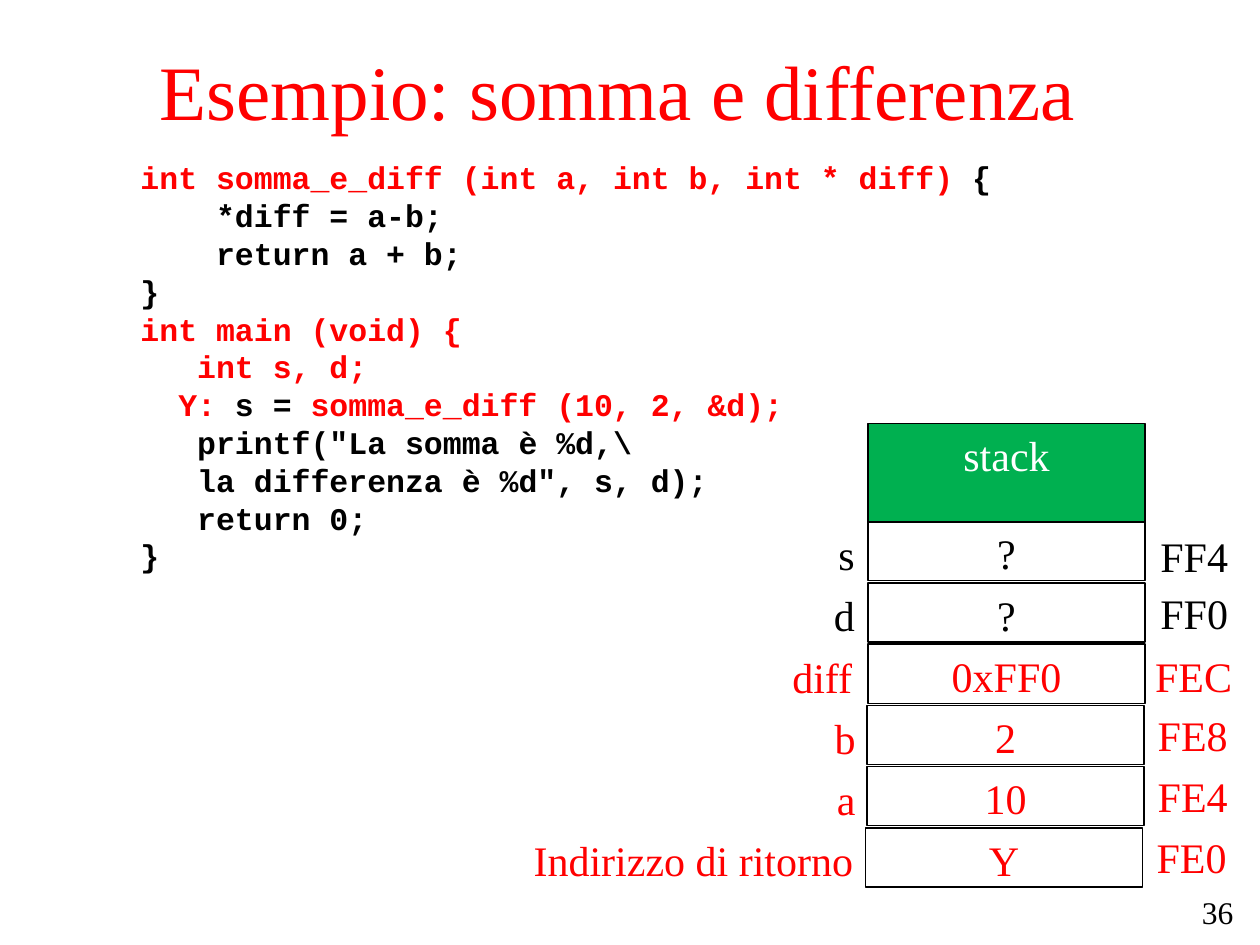
import pptx
import pptx.util
import pptx.dml.color
import pptx.enum.shapes
import pptx.enum.text

Pt = pptx.util.Pt
ALIGN = pptx.enum.text.PP_ALIGN
TOP = pptx.enum.text.MSO_ANCHOR.TOP
MID = pptx.enum.text.MSO_ANCHOR.MIDDLE
RECT = pptx.enum.shapes.MSO_SHAPE.RECTANGLE

HUES = {"red": "FF0000", "black": "000000", "green": "00B050", "white": "FFFFFF"}
SERIF, MONO = "Times New Roman", "Courier New"

TITLE = "Esempio: somma e differenza"

# Code lines: indent in characters, then (text, colour) runs
CODE = [
    (0, [("int somma_e_diff (int a, int b, int * diff)", "red"), (" {", "black")]),
    (4, [("*diff = a-b;", "black")]),
    (4, [("return a + b;", "black")]),
    (0, [("}", "black")]),
    (0, [("int main (void) {", "red")]),
    (3, [("int s, d;", "red")]),
    (2, [("Y: ", "red"), ("s = ", "black"), ("somma_e_diff (10, 2, &d);", "red")]),
    (3, [('printf("La somma è %d,\\', "black")]),
    (3, [('la differenza è %d", s, d);', "black")]),
    (3, [("return 0;", "black")]),
    (0, [("}", "black")]),
]

# Stack rows: name, value, address, colour, cell left,
# name right, name width, address left, address top shift
ROWS = [
    ("s", "?", "FF4", "black", 496, 495.4, 27.4, 656, 1.4),
    ("d", "?", "FF0", "black", 496, 495.4, 25.9, 656, -1.2),
    ("diff", "0xFF0", "FEC", "red", 496, 494, 61.2, 653, 0),
    ("b", "2", "FE8", "red", 495.4, 496, 47.5, 654.5, -1.4),
    ("a", "10", "FE4", "red", 495.4, 496, 47.5, 654.5, -1.4),
    ("Indirizzo di ritorno", "Y", "FE0", "red", 494.6, 494.6, 205.2, 653.8, -1.4),
]
FIRST, STEP = 298.1, 35
CELL_W, CELL_H, ADDR_W, NAME_H = 158.4, 33.8, 64, 37
CHAR, LINE = 10.8, 21.6  # code character width and line pitch


def rgb(hue):
    return pptx.dml.color.RGBColor.from_string(HUES[hue])


def style(item, values):
    for key, value in values.items():
        setattr(item, key, value)


def write(para, text, hue, size=24, face=SERIF, bold=False):
    run = para.add_run()
    run.text = text
    style(run.font, {"size": Pt(size), "name": face, "bold": bold})
    run.font.color.rgb = rgb(hue)


def frame(shape, anchor=TOP):
    style(shape.text_frame, {
        "word_wrap": True, "vertical_anchor": anchor,
        "margin_left": Pt(7.2), "margin_right": Pt(7.2),
        "margin_top": Pt(3.6), "margin_bottom": Pt(3.6),
    })
    return shape.text_frame


def label(box, text, hue, align=ALIGN.LEFT, size=24):
    shape = slide.shapes.add_textbox(*map(Pt, box))
    para = frame(shape).paragraphs[0]
    para.alignment = align
    write(para, text, hue, size)


def cell(box, text, hue, fill=None):
    shape = slide.shapes.add_shape(RECT, *map(Pt, box))
    shape.shadow.inherit = False
    if fill:
        shape.fill.solid()
        shape.fill.fore_color.rgb = rgb(fill)
    else:
        shape.fill.background()
    shape.line.color.rgb = rgb("black")
    shape.line.width = Pt(0.75)
    para = frame(shape).paragraphs[0]
    para.alignment = ALIGN.CENTER
    write(para, text, hue)


deck = pptx.Presentation()
style(deck, {"slide_width": Pt(720), "slide_height": Pt(540)})
slide = deck.slides.add_slide(deck.slide_layouts[5])

# Title
head = slide.shapes.title
style(head, {"left": Pt(0), "top": Pt(0), "width": Pt(706.3), "height": Pt(102.2)})
para = frame(head, MID).paragraphs[0]
para.alignment = ALIGN.CENTER
write(para, TITLE, "red", 44)

# Code listing
area = slide.shapes.add_textbox(Pt(73.2), Pt(87), Pt(633), Pt(289))
body = frame(area)
for i, (indent, runs) in enumerate(CODE):
    para = body.paragraphs[0] if i == 0 else body.add_paragraph()
    para.line_spacing = Pt(LINE)
    props = para._p.get_or_add_pPr()
    props.set("marL", str(int(Pt(indent * CHAR))))
    props.set("indent", "0")
    for text, hue in runs:
        write(para, text, hue, 18, MONO, True)

# Stack: header, then a name, a value and an address per row
cell((496, 241.9, CELL_W, 56.6), "stack", "white", "green")
for i, (name, value, addr, hue, left, right, wide, side, shift) in enumerate(ROWS):
    top = FIRST + i * STEP
    cell((left, top, CELL_W, CELL_H), value, hue)
    label((right - wide, top + 0.4, wide, NAME_H), name, hue, ALIGN.RIGHT)
    label((side, top + shift, ADDR_W, CELL_H), addr, hue)

# Page number
label((679.7, 506.9, 33.1, 31.7), "36", "black", size=18)

deck.save("out.pptx")
